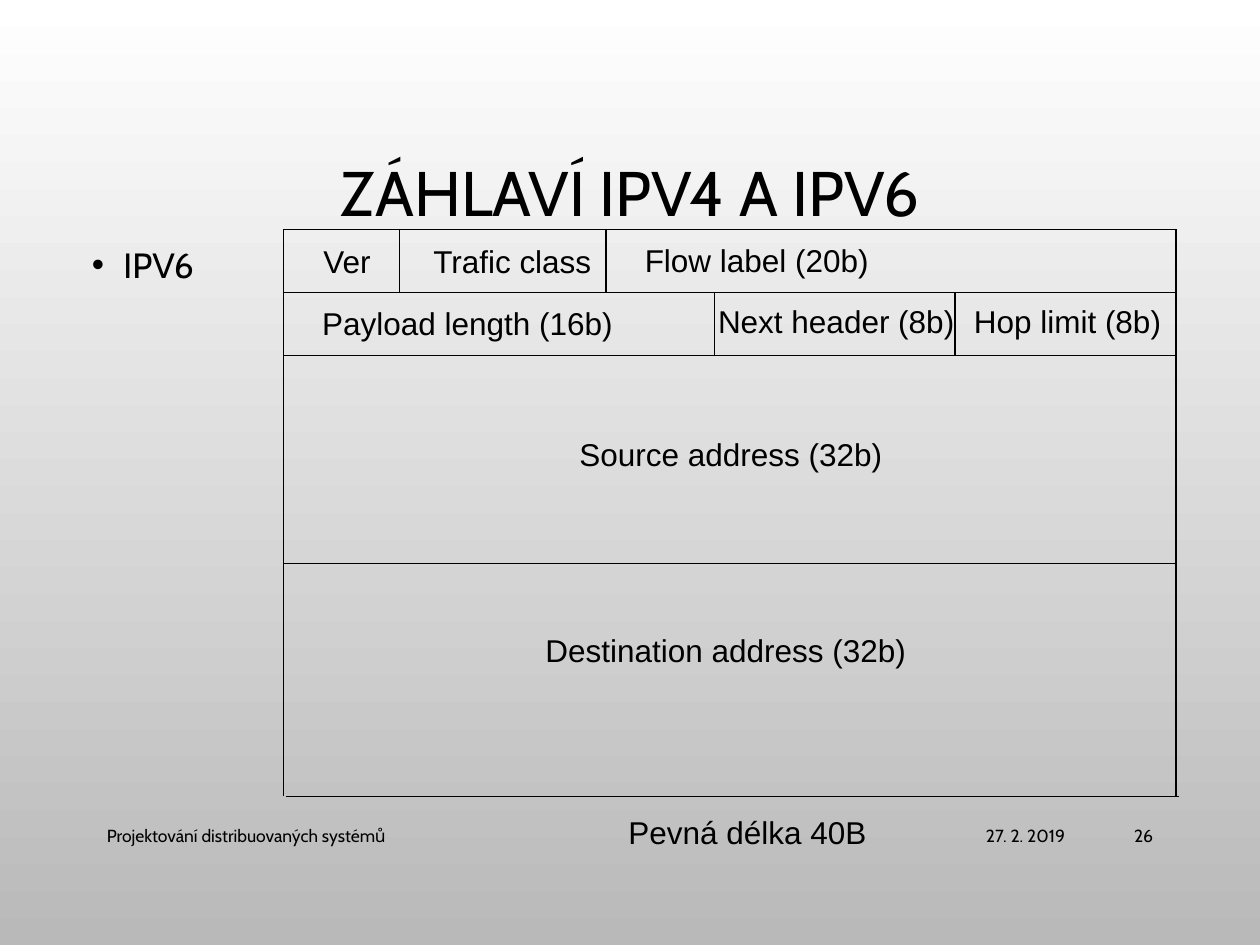
from dataclasses import dataclass

from lxml import etree
from pptx import Presentation
from pptx.dml.color import RGBColor
from pptx.enum import shapes, text
from pptx.oxml import ns
from pptx.util import Pt

COLORS = {"ink": "000000", "top": "FFFFFF", "bottom": "B9B9B9"}
LEFT, RIGHT = 162, 672
TOP, FLOW, PAYLOAD, SOURCE, BOTTOM = 131, 167, 203, 322, 455
FIELD_HEIGHT, FOOTER_TOP, FOOTER_HEIGHT = 29, 463, 29
ALIGN, ANCHOR = text.PP_ALIGN, text.MSO_ANCHOR


@dataclass(frozen=True)
class Label:
    """Wording with its place and text style."""

    words: str
    left: float
    top: float
    width: float
    height: float = FIELD_HEIGHT
    size: float = 18
    font: str = "Arial"
    align: text.PP_ALIGN = ALIGN.LEFT
    anchor: text.MSO_ANCHOR = ANCHOR.TOP
    wrap: bool = True
    fit: text.MSO_AUTO_SIZE = text.MSO_AUTO_SIZE.NONE
    spacing: float = 1.0


@dataclass(frozen=True)
class Rule:
    """Straight line of the header diagram."""

    x1: float
    y1: float
    x2: float
    y2: float


def field(words: str, left: float, top: float, width: float) -> Label:
    """Describe a header field that grows with its words."""
    return Label(words, left, top, width, wrap=False, fit=text.MSO_AUTO_SIZE.SHAPE_TO_FIT_TEXT)


def footer(words: str, left: float, width: float, align: text.PP_ALIGN) -> Label:
    """Describe one part of the footer."""
    return Label(words, left, FOOTER_TOP, width, FOOTER_HEIGHT, 10, "Cabin", align, ANCHOR.MIDDLE)


TITLE = Label("ZÁHLAVÍ IPV4 A IPV6", 54, 49, 612, 126, 36, "Cabin",
              ALIGN.CENTER, ANCHOR.MIDDLE, spacing=0.9)
TOPIC = Label("IPV6", 45.4, 131, 96.5, 39, 20, "Cabin", spacing=1.2)
FOOTERS = [
    footer("27. 2. 2019", 453.6, 162, ALIGN.RIGHT),
    footer("Projektování distribuovaných systémů", 54, 394, ALIGN.LEFT),
    footer("26", 620.6, 45.4, ALIGN.RIGHT),
]
FIELDS = [
    field("Ver", 177.8, 134.6, 42),
    field("Trafic class", 240.5, 134.6, 106),
    field("Flow label (20b)", 361.4, 134, 149),
    field("Payload length (16b)", 177, 170, 182),
    field("Next header (8b)", 403.2, 169, 151),
    field("Hop limit (8b)", 549.4, 169, 122.4),
    field("Source address (32b)", 324, 244.8, 189.4),
    field("Destination address (32b)", 304.6, 357, 222.5),
    field("Pevná délka 40B", 352, 461, 152),
]
RULES = [
    *(Rule(LEFT, y, RIGHT, y) for y in (TOP, FLOW, PAYLOAD, SOURCE)),
    Rule(LEFT + 1.5, BOTTOM, RIGHT + 1.5, BOTTOM),
    *(Rule(x, TOP, x, BOTTOM) for x in (LEFT, RIGHT)),
    *(Rule(x, TOP, x, FLOW) for x in (228.2, 346.3)),
    *(Rule(x, FLOW, x, PAYLOAD) for x in (408.2, 545.8)),
]


def apply(target: object, values: dict) -> None:
    """Set each named attribute to its value."""
    for name, value in values.items():
        setattr(target, name, value)


def draw_label(page, label: Label):
    """Draw a label and return its paragraph."""
    box = page.shapes.add_textbox(*map(Pt, (label.left, label.top, label.width, label.height)))
    apply(box.text_frame, {"word_wrap": label.wrap, "auto_size": label.fit,
                           "vertical_anchor": label.anchor})
    para = box.text_frame.paragraphs[0]
    apply(para, {"alignment": label.align, "line_spacing": label.spacing})
    span = para.add_run()
    span.text = label.words
    apply(span.font, {"name": label.font, "size": Pt(label.size)})
    span.font.color.rgb = RGBColor.from_string(COLORS["ink"])
    return para


def add_bullet(para) -> None:
    """Give a paragraph a hanging bullet."""
    para.space_before = Pt(10)
    properties = para._p.get_or_add_pPr()
    apply_indent = {"marL": Pt(18), "indent": Pt(-18)}
    for name, value in apply_indent.items():
        properties.set(name, str(int(value)))
    color = etree.SubElement(properties, ns.qn("a:buClr"))
    etree.SubElement(color, ns.qn("a:srgbClr"), val=COLORS["ink"])
    etree.SubElement(properties, ns.qn("a:buFont"), typeface="Arial")
    etree.SubElement(properties, ns.qn("a:buChar"), char="•")


def draw_rule(page, rule: Rule) -> None:
    """Draw one thin line without a shadow."""
    line = page.shapes.add_connector(shapes.MSO_CONNECTOR.STRAIGHT,
                                     *map(Pt, (rule.x1, rule.y1, rule.x2, rule.y2)))
    line.line.width = Pt(0.75)
    line.line.color.rgb = RGBColor.from_string(COLORS["ink"])
    etree.SubElement(line._element.spPr, ns.qn("a:effectLst"))


def paint_background(page) -> None:
    """Fill the page with a vertical gradient."""
    fill = page.background.fill
    fill.gradient()
    fill.gradient_angle = 270
    for stop, position, name in zip(fill.gradient_stops, (0, 1), ("top", "bottom")):
        stop.position = position
        stop.color.rgb = RGBColor.from_string(COLORS[name])


def main() -> None:
    """Build the IPv6 header slide."""
    deck = Presentation()
    apply(deck, {"slide_width": Pt(720), "slide_height": Pt(540)})
    page = deck.slides.add_slide(deck.slide_layouts[6])
    paint_background(page)
    draw_label(page, TITLE)
    add_bullet(draw_label(page, TOPIC))
    for rule in RULES:
        draw_rule(page, rule)
    for label in FOOTERS + FIELDS:
        draw_label(page, label)
    deck.save("out.pptx")


if __name__ == "__main__":
    main()
